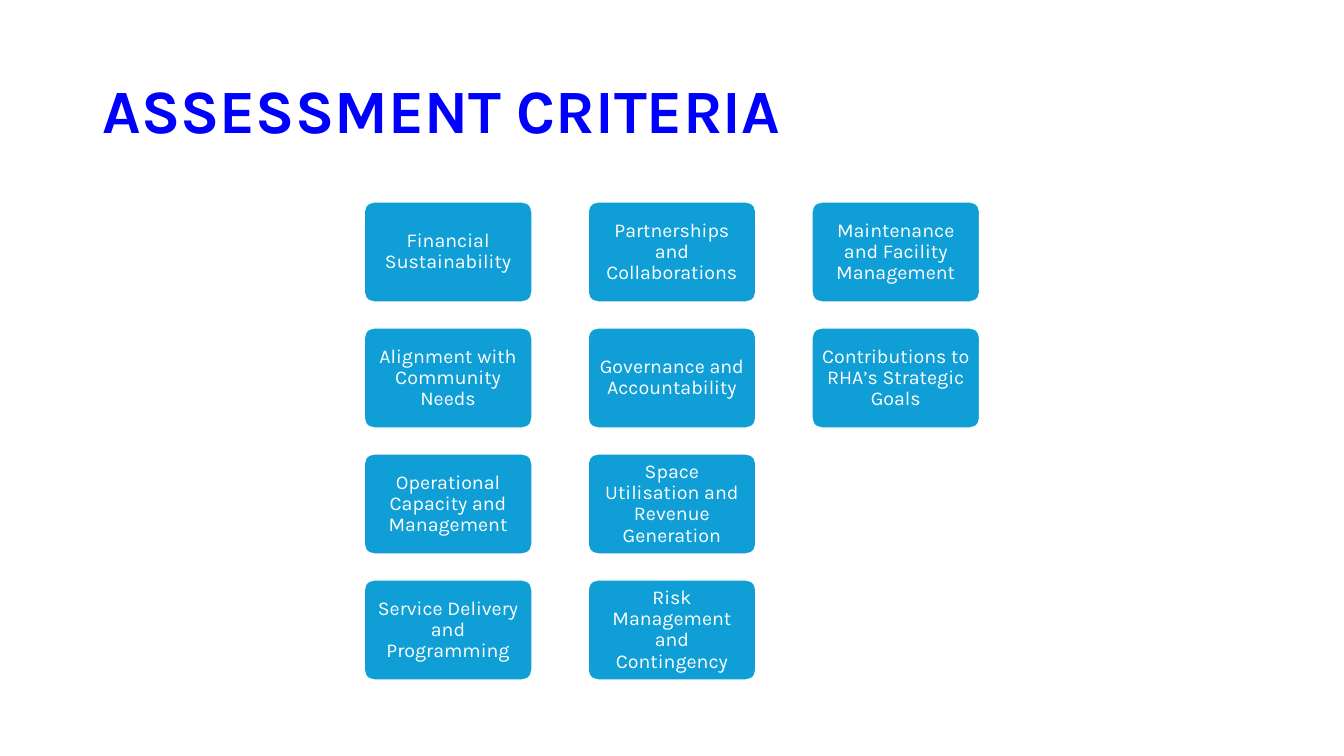
from pptx import Presentation
from pptx import util as u
from pptx.dml.color import RGBColor
from pptx.enum import shapes, text

COLOURS = {"title": "0000FF", "card": "0F9ED5", "white": "FFFFFF"}
FONT = "Karla"

CRITERIA_COLUMNS = [
    ["Financial Sustainability", "Alignment with Community Needs",
     "Operational Capacity and Management", "Service Delivery and Programming"],
    ["Partnerships and Collaborations", "Governance and Accountability",
     "Space Utilisation and Revenue Generation", "Risk Management and Contingency"],
    ["Maintenance and Facility Management", "Contributions to RHA’s Strategic Goals"],
]
LEFT, TOP = 3.61, 2
COLUMN_STEP, ROW_STEP = 2.22, 1.25
CARD_WIDTH, CARD_HEIGHT = 1.67, 1


def write(frame, words, size, colour, align, bold=False):
    frame.text = words
    frame.word_wrap = True
    frame.vertical_anchor = text.MSO_ANCHOR.MIDDLE
    paragraph = frame.paragraphs[0]
    paragraph.alignment = align
    paragraph.line_spacing = 0.9
    font = paragraph.runs[0].font
    font.name = FONT
    font.size = u.Pt(size)
    font.bold = bold
    font.color.rgb = RGBColor.from_string(COLOURS[colour])


deck = Presentation()
deck.slide_width, deck.slide_height = u.Inches(13.33), u.Inches(7.5)
slide = deck.slides.add_slide(deck.slide_layouts[5])

title = slide.shapes.title
title.left, title.top = u.Inches(0.92), u.Inches(0.4)
title.width, title.height = u.Inches(11.5), u.Inches(1.45)
write(title.text_frame, "ASSESSMENT CRITERIA", 44, "title", text.PP_ALIGN.LEFT, bold=True)

for column, criteria in enumerate(CRITERIA_COLUMNS):
    for row, criterion in enumerate(criteria):
        card = slide.shapes.add_shape(
            shapes.MSO_SHAPE.ROUNDED_RECTANGLE,
            u.Inches(LEFT + column * COLUMN_STEP), u.Inches(TOP + row * ROW_STEP),
            u.Inches(CARD_WIDTH), u.Inches(CARD_HEIGHT))
        card.adjustments[0] = 0.1
        card.shadow.inherit = False
        card.fill.solid()
        card.fill.fore_color.rgb = RGBColor.from_string(COLOURS["card"])
        card.line.color.rgb = RGBColor.from_string(COLOURS["white"])
        card.line.width = u.Pt(1.5)
        frame = card.text_frame
        frame.margin_left = frame.margin_right = u.Inches(0.06)
        frame.margin_top = frame.margin_bottom = u.Inches(0.06)
        write(frame, criterion, 14, "white", text.PP_ALIGN.CENTER)

deck.save("out.pptx")
